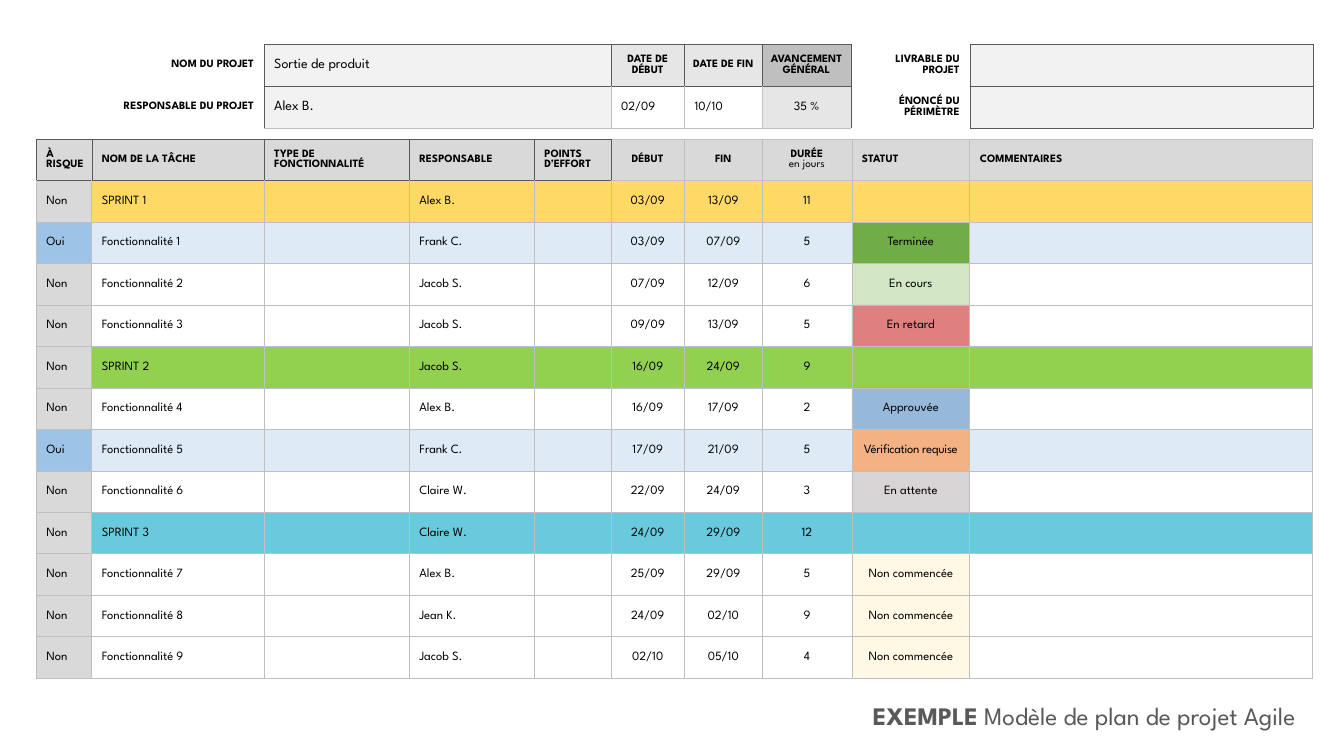
from dataclasses import dataclass
from typing import Optional

from lxml.etree import SubElement
from pptx import Presentation
from pptx.dml.color import RGBColor
from pptx.enum.text import MSO_ANCHOR as Anchor, MSO_AUTO_SIZE as AutoSize, PP_ALIGN as Align
from pptx.oxml.ns import qn
from pptx.util import Inches, Pt

FONT = "League Spartan"
BLACK = RGBColor(0x00, 0x00, 0x00)
WHITE = RGBColor(0xFF, 0xFF, 0xFF)
DARK = RGBColor(0x59, 0x59, 0x59)
LINE = RGBColor(0xBF, 0xBF, 0xBF)
HEAD = RGBColor(0xD9, 0xD9, 0xD9)
PALE = RGBColor(0xF2, 0xF2, 0xF2)
SOFT = RGBColor(0xE7, 0xE6, 0xE6)
RISK = RGBColor(0x9D, 0xC3, 0xE6)
RISK_ROW = RGBColor(0xDE, 0xEB, 0xF7)
GOLD = RGBColor(0xFF, 0xD9, 0x66)
GREEN = RGBColor(0x92, 0xD0, 0x50)
TEAL = RGBColor(0x68, 0xCA, 0xDC)
DONE = RGBColor(0x70, 0xAD, 0x47)
ACTIVE = RGBColor(0xA9, 0xD1, 0x8E)
LATE = RGBColor(0xC0, 0x00, 0x00)
APPROVED = RGBColor(0x2E, 0x75, 0xB6)
REVIEW = RGBColor(0xF4, 0xB1, 0x83)
WAITING = RGBColor(0xAF, 0xAB, 0xAB)
TO_DO = RGBColor(0xFF, 0xF2, 0xCC)

STATUS_COLORS = {
    "Terminée": DONE,
    "En cours": ACTIVE,
    "En retard": LATE,
    "Approuvée": APPROVED,
    "Vérification requise": REVIEW,
    "En attente": WAITING,
    "Non commencée": TO_DO,
}
SOLID_STATUSES = {"Terminée", "Vérification requise"}
BORDERS = {"D": (DARK, 0.25), "G": (LINE, 0.5)}
NORMAL = (0.1, 0.05, 0.1, 0.05)
RISK_INSET = (0.1, 0.05, 0, 0.05)
TIGHT = (0.04, 0.05, 0.04, 0.05)
NONE = (0, 0, 0, 0)


@dataclass
class Cell:
    text: str = ""
    fill: Optional[RGBColor] = None
    size: float = 9
    bold: bool = False
    align: Align = Align.LEFT
    inset: tuple = NORMAL
    borders: str = "GGGG"
    half: bool = False
    note: str = ""
    spacing: int = 0


@dataclass
class Task:
    name: str
    owner: str
    start: str
    end: str
    days: str
    status: str = ""
    at_risk: bool = False
    sprint: Optional[RGBColor] = None


TASKS = [
    Task("SPRINT 1", "Alex B.", "03/09", "13/09", "11", sprint=GOLD),
    Task("Fonctionnalité 1", "Frank C.", "03/09", "07/09", "5", "Terminée", True),
    Task("Fonctionnalité 2", "Jacob S.", "07/09", "12/09", "6", "En cours"),
    Task("Fonctionnalité 3", "Jacob S.", "09/09", "13/09", "5", "En retard"),
    Task("SPRINT 2", "Jacob S.", "16/09", "24/09", "9", sprint=GREEN),
    Task("Fonctionnalité 4", "Alex B.", "16/09", "17/09", "2", "Approuvée"),
    Task("Fonctionnalité 5", "Frank C.", "17/09", "21/09", "5", "Vérification requise", True),
    Task("Fonctionnalité 6", "Claire W.", "22/09", "24/09", "3", "En attente"),
    Task("SPRINT 3", "Claire W.", "24/09", "29/09", "12", sprint=TEAL),
    Task("Fonctionnalité 7", "Alex B.", "25/09", "29/09", "5", "Non commencée"),
    Task("Fonctionnalité 8", "Jean K.", "24/09", "02/10", "9", "Non commencée"),
    Task("Fonctionnalité 9", "Jacob S.", "02/10", "05/10", "4", "Non commencée"),
]


def add_run(p, text: str, size: float, bold: bool, color: RGBColor, spacing: int = 0) -> None:
    r = p.add_run()
    r.text = text
    r.font.name, r.font.size, r.font.bold = FONT, Pt(size), bold
    r.font.color.rgb = color
    if spacing:
        r.font._element.set("spc", str(spacing))


def draw_borders(tc_pr, borders: str) -> None:
    for side, kind in zip("LRTB", borders):
        ln = SubElement(tc_pr, qn(f"a:ln{side}"))
        if kind in BORDERS:
            color, width = BORDERS[kind]
            ln.set("w", str(int(Pt(width))))
            fill = SubElement(ln, qn("a:solidFill"))
            SubElement(fill, qn("a:srgbClr")).set("val", str(color))
        else:
            SubElement(ln, qn("a:noFill"))


def draw_cell(target, cell: Cell) -> None:
    tc_pr = target._tc.get_or_add_tcPr()
    draw_borders(tc_pr, cell.borders)
    if cell.fill is None:
        target.fill.background()
    else:
        target.fill.solid()
        target.fill.fore_color.rgb = cell.fill
        if cell.half:
            color = tc_pr.find(qn("a:solidFill")).find(qn("a:srgbClr"))
            SubElement(color, qn("a:alpha")).set("val", "50000")
    target.vertical_anchor = Anchor.MIDDLE
    (target.margin_left, target.margin_top,
     target.margin_right, target.margin_bottom) = map(Inches, cell.inset)
    p = target.text_frame.paragraphs[0]
    p.alignment = cell.align
    if cell.text:
        add_run(p, cell.text, cell.size, cell.bold, BLACK, cell.spacing)
    if cell.note:
        p.add_line_break()
        add_run(p, cell.note, cell.size, False, BLACK)


def draw_table(s, left: float, top: float, height: float,
               widths: list[float], rows: list[list[Cell]]) -> None:
    frame = s.shapes.add_table(len(rows), len(widths), Inches(left), Inches(top),
                               Inches(sum(widths)), Inches(height))
    table = frame.table
    table.first_row = table.horz_banding = False
    for column, width in zip(table.columns, widths):
        column.width = Inches(width)
    for i, row in enumerate(rows):
        table.rows[i].height = Inches(height / len(rows))
        for j, cell in enumerate(row):
            draw_cell(table.cell(i, j), cell)


def plan_header() -> list[Cell]:
    left = ["À RISQUE", "NOM DE LA TÂCHE", "TYPE DE FONCTIONNALITÉ", "RESPONSABLE", "POINTS D’EFFORT"]
    cells = [Cell(t, HEAD, 8, True, borders="DDDD") for t in left]
    cells[0].inset = RISK_INSET
    return cells + [
        Cell("DÉBUT", HEAD, 8, True, Align.CENTER, borders="DGGG"),
        Cell("FIN", HEAD, 8, True, Align.CENTER),
        Cell("DURÉE", HEAD, 8, True, Align.CENTER, note="en jours"),
        Cell("STATUT", HEAD, 8, True),
        Cell("COMMENTAIRES", HEAD, 8, True),
    ]


def plan_row(task: Task, first: bool) -> list[Cell]:
    fill = task.sprint or (RISK_ROW if task.at_risk else WHITE)
    half = fill == WHITE
    edges = "GGDG" if first else "GGGG"
    risk = Cell("Oui" if task.at_risk else "Non", RISK if task.at_risk else HEAD,
                inset=RISK_INSET, borders=edges)
    labels = [Cell(t, fill, borders=edges) for t in (task.name, "", task.owner, "")]
    figures = [Cell(t, fill, align=Align.CENTER, inset=NONE, half=half)
               for t in (task.start, task.end, task.days)]
    status = Cell(task.status, STATUS_COLORS.get(task.status, fill), align=Align.CENTER, inset=NONE,
                  half=bool(task.status) and task.status not in SOLID_STATUSES,
                  spacing=-20 if task.status == "Vérification requise" else 0)
    return [risk, *labels, *figures, status, Cell(fill=fill, half=half)]


def summary_rows() -> list[list[Cell]]:
    def label(text: str, borders: str) -> Cell:
        return Cell(text, None, 8, True, Align.RIGHT, borders=borders)

    def heading(text: str, fill: RGBColor) -> Cell:
        return Cell(text, fill, 8, True, Align.CENTER, TIGHT, "DDDD")

    blank = Cell(fill=PALE, borders="DDDD")
    return [
        [label("NOM DU PROJET", "NDNN"), Cell("Sortie de produit", PALE, 10, borders="DDDD"),
         heading("DATE DE DÉBUT", SOFT), heading("DATE DE FIN", SOFT),
         heading("AVANCEMENT GÉNÉRAL", LINE), label("LIVRABLE DU PROJET", "DDNN"), blank],
        [label("RESPONSABLE DU PROJET", "NDNN"), Cell("Alex B.", PALE, 10, borders="DGDG"),
         Cell("02/09", WHITE, borders="GGDG"), Cell("10/10", WHITE, borders="GGDG"),
         Cell("35 %", SOFT, align=Align.CENTER, borders="GDDG"),
         label("ÉNONCÉ DU PÉRIMÈTRE", "DDNN"), blank],
    ]


def draw_title(s) -> None:
    tf = s.shapes.add_textbox(Inches(5.14), Inches(6.9), Inches(7.87), Inches(0.4)).text_frame
    tf.word_wrap = True
    tf.auto_size = AutoSize.SHAPE_TO_FIT_TEXT
    p = tf.paragraphs[0]
    p.alignment = Align.RIGHT
    add_run(p, "EXEMPLE", 18, True, DARK)
    add_run(p, " Modèle de plan de projet Agile ", 18, False, DARK)


def main() -> None:
    prs = Presentation()
    prs.slide_width, prs.slide_height = Inches(13.33), Inches(7.5)
    s = prs.slides.add_slide(prs.slide_layouts[6])
    draw_title(s)
    plan = [plan_header()] + [plan_row(task, i == 0) for i, task in enumerate(TASKS)]
    draw_table(s, 0.36, 1.38, 5.35,
               [0.55, 1.71, 1.44, 1.24, 0.76, 0.73, 0.77, 0.89, 1.17, 3.4], plan)
    draw_table(s, 0.81, 0.44, 0.83, [1.81, 3.44, 0.73, 0.77, 0.88, 1.18, 3.4], summary_rows())
    prs.save("out.pptx")


if __name__ == "__main__":
    main()
